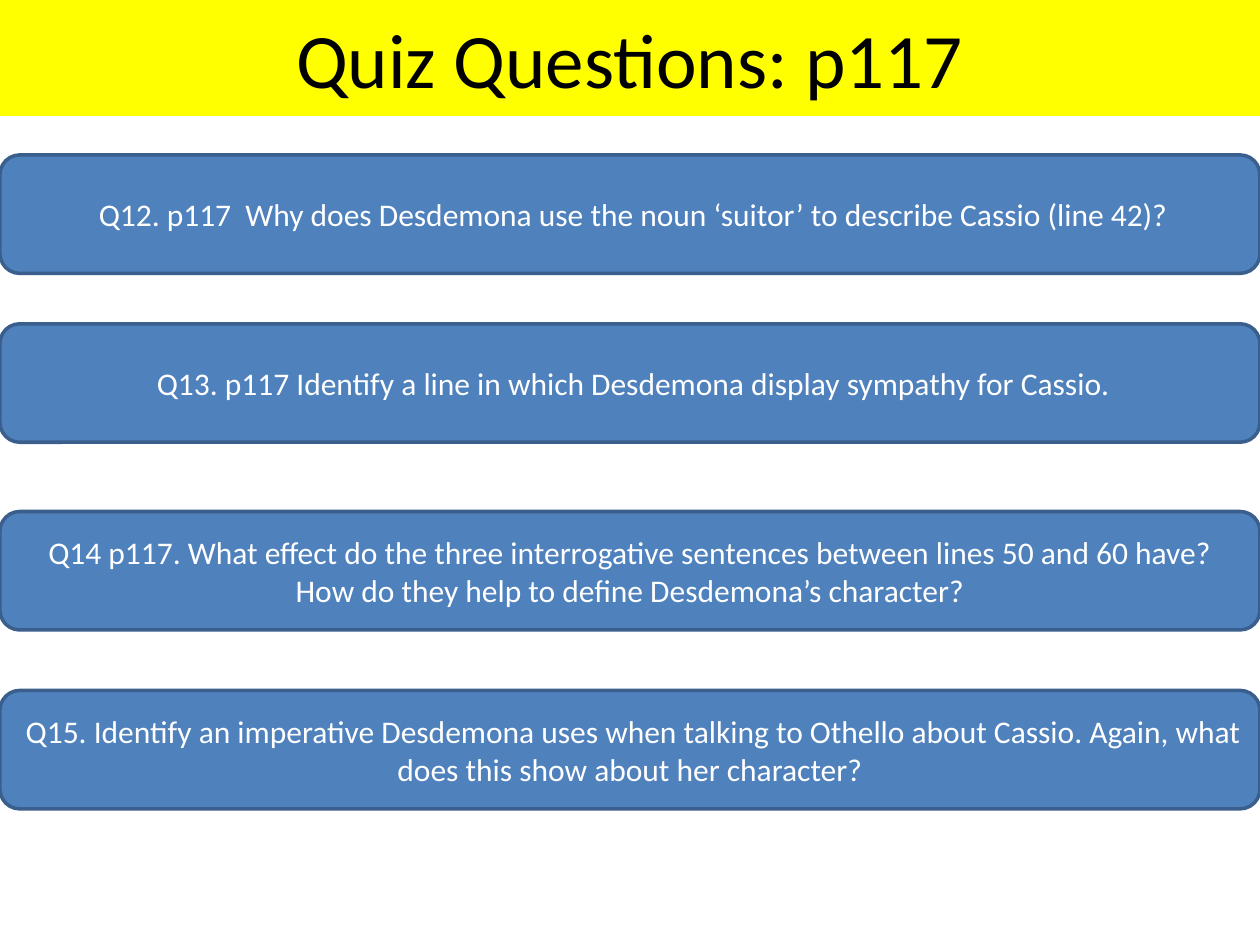
from pptx import Presentation
from pptx.dml.color import RGBColor
from pptx.enum import shapes, text
from pptx.util import Inches, Pt

HEADING = "Quiz Questions: p117"
QUESTIONS = [
    (1.23, " Q12. p117  Why does Desdemona use the noun ‘suitor’ to describe Cassio (line 42)?"),
    (2.57, " Q13. p117 Identify a line in which Desdemona display sympathy for Cassio."),
    (5.48, " Q15. Identify an imperative Desdemona uses when talking to Othello about Cassio. "
           "Again, what does this show about her character?"),
    (4.06, "Q14 p117. What effect do the three interrogative sentences between lines 50 and 60 "
           "have? How do they help to define Desdemona’s character?"),
]
SLIDE_WIDTH, SLIDE_HEIGHT = Inches(10), Inches(7.5)
HEADING_HEIGHT = Inches(0.92)
QUESTION_HEIGHT = Inches(0.94)


def paint(color_format, color):
    color_format.rgb = RGBColor.from_string(color)


def dress(box, wording, fill, size, color):
    box.fill.solid()
    paint(box.fill.fore_color, fill)
    frame = box.text_frame
    frame.text = wording
    frame.word_wrap = True
    frame.vertical_anchor = text.MSO_ANCHOR.MIDDLE
    paragraph = frame.paragraphs[0]
    paragraph.alignment = text.PP_ALIGN.CENTER
    paragraph.font.name = "Calibri"
    paragraph.font.size = Pt(size)
    paint(paragraph.font.color, color)


deck = Presentation()
deck.slide_width, deck.slide_height = SLIDE_WIDTH, SLIDE_HEIGHT
slide = deck.slides.add_slide(deck.slide_layouts[5])

heading = slide.shapes.title
heading.left, heading.top = 0, 0
heading.width, heading.height = SLIDE_WIDTH, HEADING_HEIGHT
dress(heading, HEADING, "FFFF00", 44, "000000")

for top, wording in QUESTIONS:
    question = slide.shapes.add_shape(
        shapes.MSO_SHAPE.ROUNDED_RECTANGLE, 0, Inches(top), SLIDE_WIDTH, QUESTION_HEIGHT)
    question.shadow.inherit = False
    paint(question.line.color, "3A5F8C")
    question.line.width = Pt(2)
    dress(question, wording, "4F81BD", 18, "FFFFFF")

deck.save("out.pptx")
